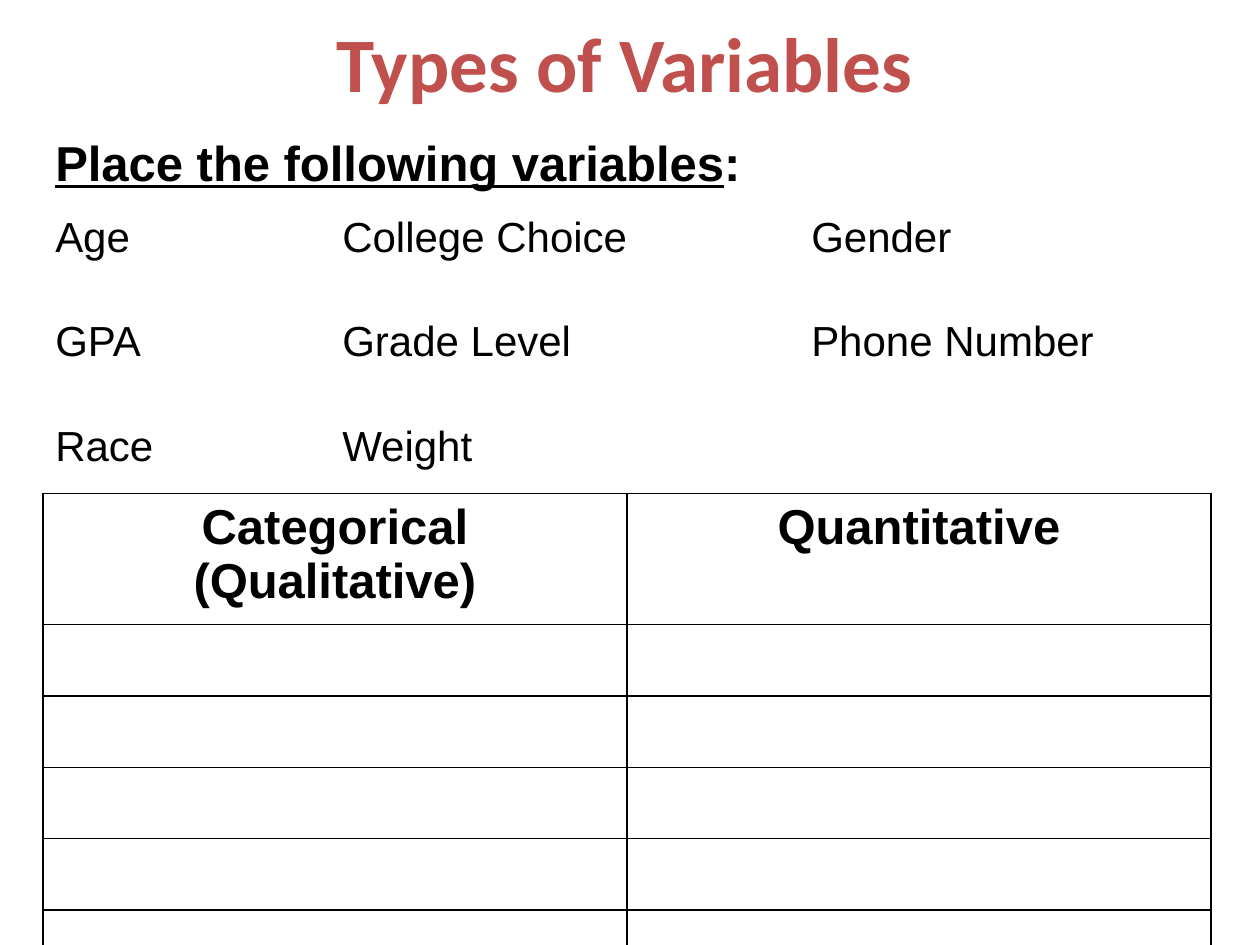
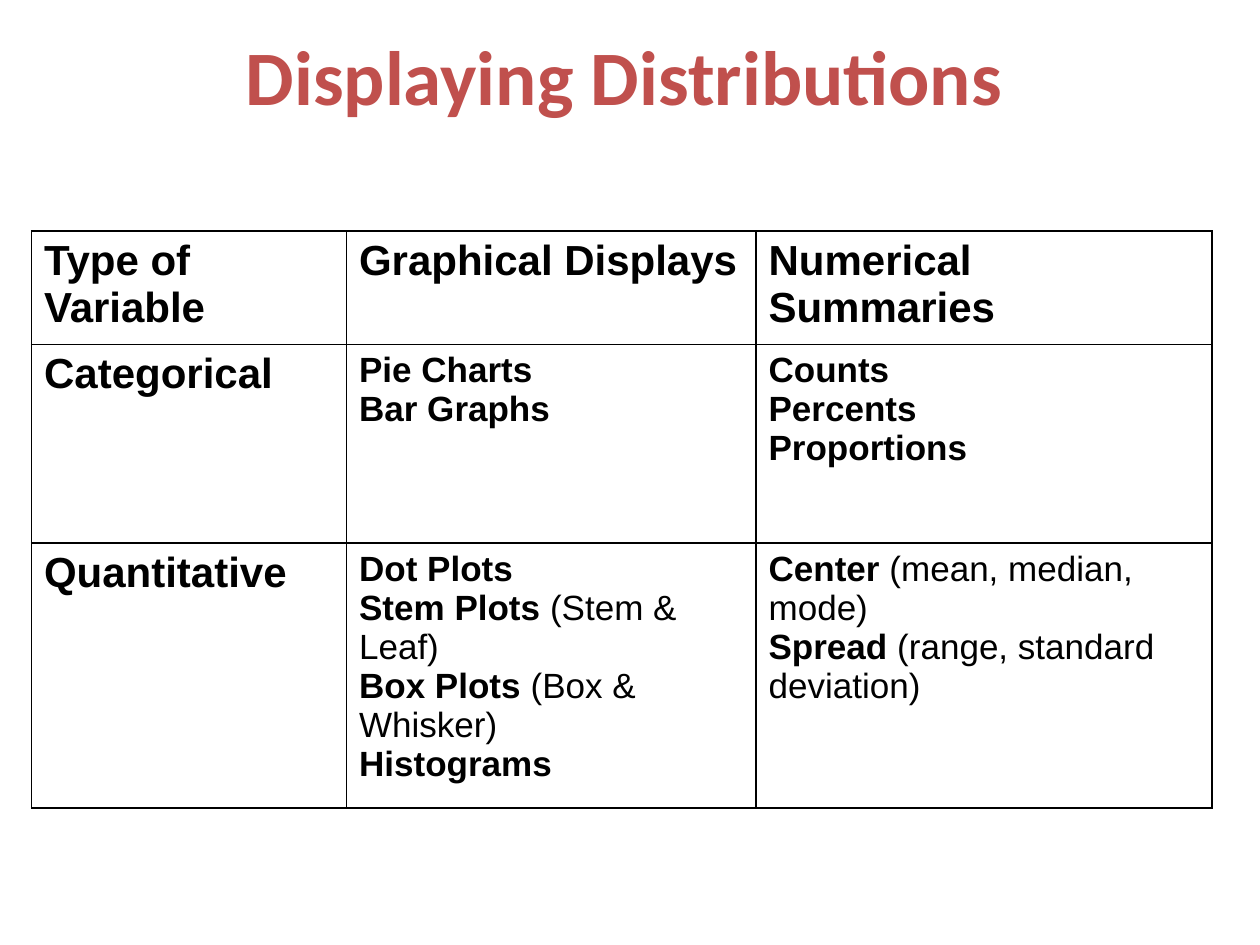
import pptx
import pptx.dml.color
import pptx.enum.text
import pptx.oxml
import pptx.oxml.ns
import pptx.util

Pt = pptx.util.Pt
PP_ALIGN = pptx.enum.text.PP_ALIGN
ANCHOR = pptx.enum.text.MSO_ANCHOR
NS = pptx.oxml.ns.nsdecls("a")

INK, ACCENT = "000000", "C0504D"
BODY_FONT, TITLE_FONT = "Arial", "Calibri"

VARIABLES_TITLE = "Types of Variables"
PROMPT = "Place the following variables"
VARIABLES = [
    ["Age", "College Choice", "Gender"],
    ["GPA", "Grade Level", "Phone Number"],
    ["Race", "Weight"],
]
VARIABLE_TABS = [164, 432]
BLANK_ROWS = 5

# A cell is a list of paragraphs, each a (bold part, plain part) pair.
SORTING = [[[("Categorical (Qualitative)", "")], [("Quantitative", "")]]]
SORTING += [[[], []] for _ in range(BLANK_ROWS)]

DISPLAYS_TITLE = "Displaying Distributions"
DISPLAYS = [
    [[("Type of Variable", "")], [("Graphical Displays", "")],
     [("Numerical Summaries", "")]],
    [[("Categorical", "")],
     [("Pie Charts", ""), ("Bar Graphs", "")],
     [("Counts", ""), ("Percents", ""), ("Proportions", "")]],
    [[("Quantitative", "")],
     [("Dot Plots", ""), ("Stem Plots ", "(Stem & Leaf)"),
      ("Box Plots ", "(Box & Whisker)"), ("Histograms", "")],
     [("Center ", "(mean, median, mode)"),
      ("Spread ", "(range, standard deviation)")]],
]


def rgb(value):
    return pptx.dml.color.RGBColor.from_string(value)


def add_run(p, text, size, bold=False, font=BODY_FONT, color=INK):
    r = p.add_run()
    r.text = text
    r.font.name, r.font.size, r.font.bold = font, Pt(size), bold
    r.font.color.rgb = rgb(color)
    return r


def add_textbox(s, left, top, width, height):
    tf = s.shapes.add_textbox(Pt(left), Pt(top), Pt(width), Pt(height)).text_frame
    tf.word_wrap = True
    return tf


def add_title(s, text, height):
    tf = add_textbox(s, 12, 1.5, 690, height)
    tf.vertical_anchor = ANCHOR.MIDDLE
    p = tf.paragraphs[0]
    p.alignment = PP_ALIGN.CENTER
    add_run(p, text, 44, True, TITLE_FONT, ACCENT)


def set_tabs(p, stops):
    tabs = "".join(f'<a:tab pos="{Pt(x)}" algn="l"/>' for x in stops)
    p._p.get_or_add_pPr().append(
        pptx.oxml.parse_xml(f"<a:tabLst {NS}>{tabs}</a:tabLst>"))


def set_borders(cell):
    """Rule all four sides of a cell, ahead of its fill as the schema asks."""
    for i, side in enumerate(("lnL", "lnR", "lnT", "lnB")):
        cell._tc.get_or_add_tcPr().insert(i, pptx.oxml.parse_xml(
            f'<a:{side} {NS} w="{Pt(1)}"><a:solidFill><a:srgbClr val="{INK}"/>'
            f"</a:solidFill></a:{side}>"))


def add_grid(s, left, top, widths, heights, rows, size_at, align):
    """Add a ruled table; size_at(row, column) gives the text size of a cell."""
    table = s.shapes.add_table(len(heights), len(widths), Pt(left), Pt(top),
                               Pt(sum(widths)), Pt(sum(heights))).table
    table.first_row = table.horz_banding = False
    for column, width in zip(table.columns, widths):
        column.width = Pt(width)
    for row, height in zip(table.rows, heights):
        row.height = Pt(height)
    for i, row in enumerate(rows):
        for j, paragraphs in enumerate(row):
            cell = table.cell(i, j)
            cell.fill.background()
            set_borders(cell)
            tf = cell.text_frame
            for k, (strong, plain) in enumerate(paragraphs):
                p = tf.add_paragraph() if k else tf.paragraphs[0]
                p.alignment = align
                add_run(p, strong, size_at(i, j), True)
                if plain:
                    add_run(p, plain, size_at(i, j))


def add_variables_slide(prs):
    s = prs.slides.add_slide(prs.slide_layouts[6])
    add_title(s, VARIABLES_TITLE, 67.5)
    tf = add_textbox(s, 24.5, 69, 666, 241)
    tf.margin_top = Pt(6.5)
    p = tf.paragraphs[0]
    add_run(p, PROMPT, 28, True).font.underline = True
    add_run(p, ":", 28, True)
    for i, names in enumerate(VARIABLES):
        p = tf.add_paragraph()
        p.space_before = Pt(31 if i else 11)
        set_tabs(p, VARIABLE_TABS)
        add_run(p, "\t".join(names), 24)
    add_grid(s, 24.5, 282, [333.75] * 2, [75] + [40.75] * BLANK_ROWS, SORTING,
             lambda i, j: 28, PP_ALIGN.CENTER)


def add_displays_slide(prs):
    s = prs.slides.add_slide(prs.slide_layouts[6])
    add_title(s, DISPLAYS_TITLE, 82)
    add_grid(s, 18, 132, [180, 234, 260.5], [44, 113.5, 136.5], DISPLAYS,
             lambda i, j: 20 if i and j else 24, PP_ALIGN.LEFT)


def main():
    prs = pptx.Presentation()
    prs.slide_width, prs.slide_height = Pt(720), Pt(540)
    add_variables_slide(prs)
    add_displays_slide(prs)
    prs.save("out.pptx")


if __name__ == "__main__":
    main()
